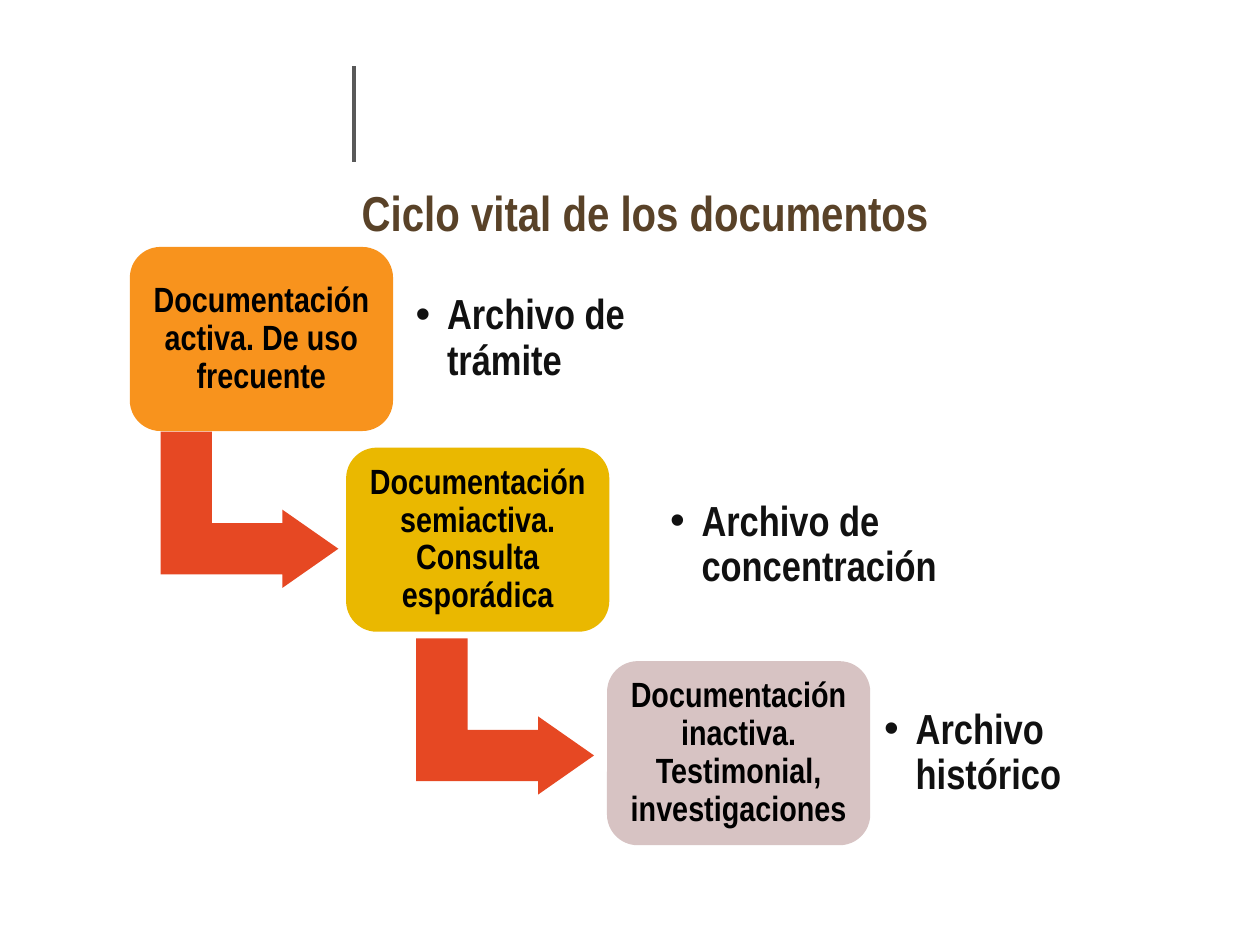
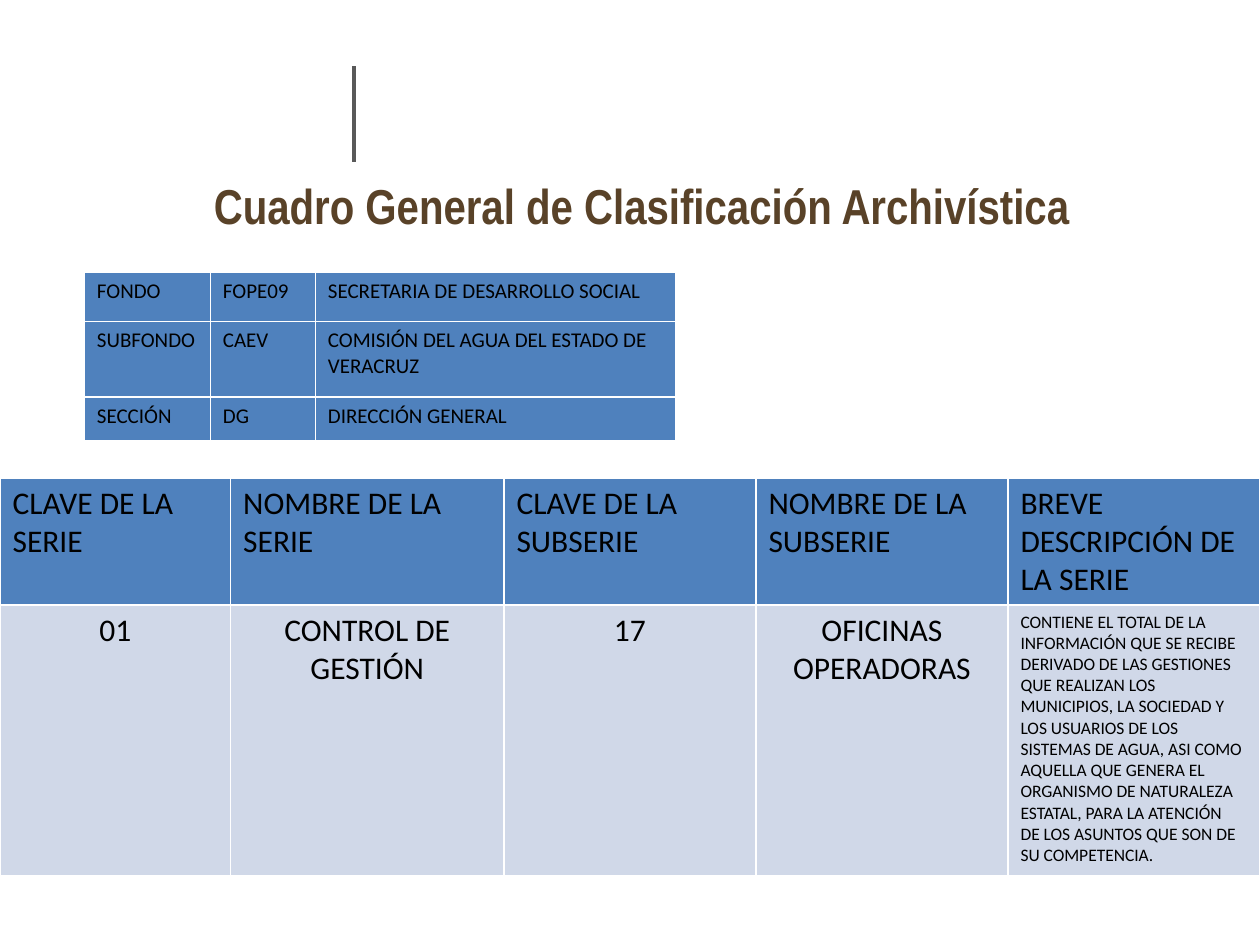
from lxml import etree
from pptx import Presentation
from pptx.dml.color import RGBColor
from pptx.enum.shapes import MSO_CONNECTOR, MSO_SHAPE
from pptx.enum.text import MSO_ANCHOR, PP_ALIGN
from pptx.oxml.ns import qn
from pptx.util import Pt

BROWN = RGBColor(0x59, 0x42, 0x28)
GRAY = RGBColor(0x59, 0x59, 0x59)
BLACK = RGBColor(0x00, 0x00, 0x00)
CHARCOAL = RGBColor(0x11, 0x11, 0x11)
RED = RGBColor(0xE6, 0x48, 0x23)
ORANGE = RGBColor(0xF8, 0x93, 0x1D)
YELLOW = RGBColor(0xEA, 0xB8, 0x00)
MAUVE = RGBColor(0xD7, 0xC3, 0xC3)
BLUE = RGBColor(0x4F, 0x81, 0xBD)
PALE_BLUE = RGBColor(0xD0, 0xD8, 0xE8)

LEFT, CENTER = PP_ALIGN.LEFT, PP_ALIGN.CENTER
TOP, MIDDLE = MSO_ANCHOR.TOP, MSO_ANCHOR.MIDDLE
STRAIGHT = MSO_CONNECTOR.STRAIGHT
ROUNDED, BENT_ARROW = MSO_SHAPE.ROUNDED_RECTANGLE, MSO_SHAPE.BENT_UP_ARROW

HEADING_FONT, TABLE_FONT = "Arial Narrow", "Calibri"
CARD_WIDTH, CARD_HEIGHT = 150.4, 105.2
BULLET_INDENT = 18


class Composer:
    def __init__(self):
        self.deck = Presentation()
        self.deck.slide_width, self.deck.slide_height = Pt(720), Pt(540)
        self.page = None

    def new_page(self):
        self.page = self.deck.slides.add_slide(self.deck.slide_layouts[6])
        rule = self.page.shapes.add_connector(STRAIGHT, Pt(202.3), Pt(38), Pt(202.3), Pt(92.8))
        rule.line.color.rgb = GRAY
        rule.line.width = Pt(2)
        etree.SubElement(rule._element.spPr, qn("a:effectLst"))

    def add_span(self, para, text, size, color, font=HEADING_FONT, bold=True, align=LEFT):
        para.alignment = align
        span = para.add_run()
        span.text = text
        span.font.name = font
        span.font.size = Pt(size)
        span.font.bold = bold
        span.font.color.rgb = color

    def prepare(self, box, inset, anchor):
        frame = box.text_frame
        frame.word_wrap = True
        frame.vertical_anchor = anchor
        frame.margin_left = frame.margin_right = Pt(inset)
        frame.margin_top = frame.margin_bottom = Pt(inset)
        return frame.paragraphs[0]

    def text_box(self, left, top, width, height, inset, anchor):
        box = self.page.shapes.add_textbox(Pt(left), Pt(top), Pt(width), Pt(height))
        return self.prepare(box, inset, anchor)

    def shape(self, kind, left, top, width, height, color):
        shape = self.page.shapes.add_shape(kind, Pt(left), Pt(top), Pt(width), Pt(height))
        shape.shadow.inherit = False
        shape.fill.solid()
        shape.fill.fore_color.rgb = color
        shape.line.fill.background()
        return shape

    def title(self, text, left, top, width, height):
        para = self.text_box(left, top, width, height, 3.6, TOP)
        self.add_span(para, text, 28, BROWN, align=CENTER)

    def card(self, text, left, top, color):
        card = self.shape(ROUNDED, left, top, CARD_WIDTH, CARD_HEIGHT, color)
        card.adjustments[0] = 0.167
        para = self.prepare(card, 6, MIDDLE)
        para.line_spacing = 0.9
        self.add_span(para, text, 20, BLACK, align=CENTER)

    def label(self, text, left, top, width):
        para = self.text_box(left, top, width, 85, 7.2, MIDDLE)
        properties = para._p.get_or_add_pPr()
        properties.set("marL", str(Pt(BULLET_INDENT)))
        properties.set("indent", str(-Pt(BULLET_INDENT)))
        para.line_spacing = 0.9
        etree.SubElement(properties, qn("a:buFont"), typeface="Arial")
        etree.SubElement(properties, qn("a:buChar"), char="•")
        self.add_span(para, text, 24, CHARCOAL)

    def arrow(self, left, top):
        arrow = self.shape(BENT_ARROW, left, top, 89.3, 101.6, RED)
        arrow.rotation = 90
        for index, value in enumerate((0.328, 0.25, 0.358)):
            arrow.adjustments[index] = value

    def cell(self, cell, lines, size, color, align):
        cell.fill.solid()
        cell.fill.fore_color.rgb = color
        frame = cell.text_frame
        for index, line in enumerate(lines):
            para = frame.add_paragraph() if index else frame.paragraphs[0]
            self.add_span(para, line, size, BLACK, TABLE_FONT, False, align)
        properties = cell._tc.get_or_add_tcPr()
        for index, side in enumerate(("a:lnL", "a:lnR", "a:lnT", "a:lnB")):
            border = etree.Element(qn(side), w=str(Pt(1)))
            fill = etree.SubElement(border, qn("a:solidFill"))
            etree.SubElement(fill, qn("a:srgbClr"), val="FFFFFF")
            properties.insert(index, border)

    def table(self, left, top, widths, heights, rows, style):
        frame = self.page.shapes.add_table(
            len(rows), len(widths), Pt(left), Pt(top), Pt(sum(widths)), Pt(sum(heights)))
        table = frame.table
        for column, width in zip(table.columns, widths):
            column.width = Pt(width)
        for row, height in zip(table.rows, heights):
            row.height = Pt(height)
        for row_index, row in enumerate(rows):
            for column_index, content in enumerate(row):
                lines = [content] if isinstance(content, str) else content
                self.cell(table.cell(row_index, column_index), lines,
                          *style(row_index, column_index))


STAGES = [
    ("Documentación activa. De uso frecuente", 74.2, 141.1, ORANGE,
     "Archivo de trámite", 230.4, 151.2, 196.6),
    ("Documentación semiactiva. Consulta esporádica", 197.8, 255.8, YELLOW,
     "Archivo de concentración", 375.8, 269.3, 251.3),
    ("Documentación inactiva. Testimonial, investigaciones", 346.9, 377.8, MAUVE,
     "Archivo histórico", 498.2, 388.1, 145.4),
]
ARROWS = [(97.9, 240.5), (244, 358.6)]

FUND_ROWS = [
    ("FONDO", "FOPE09", "SECRETARIA DE DESARROLLO SOCIAL"),
    ("SUBFONDO", "CAEV", "COMISIÓN DEL AGUA DEL ESTADO DE VERACRUZ"),
    ("SECCIÓN", "DG", "DIRECCIÓN GENERAL"),
]
DESCRIPTION = [
    "CONTIENE EL TOTAL DE LA",
    "INFORMACIÓN QUE SE RECIBE",
    "DERIVADO DE LAS GESTIONES",
    "QUE REALIZAN LOS",
    "MUNICIPIOS, LA SOCIEDAD Y",
    "LOS USUARIOS DE LOS",
    "SISTEMAS DE AGUA, ASI COMO",
    "AQUELLA QUE GENERA EL",
    "ORGANISMO DE NATURALEZA",
    "ESTATAL, PARA LA ATENCIÓN",
    "DE LOS ASUNTOS QUE SON DE SU COMPETENCIA.",
]
SERIES_ROWS = [
    ("CLAVE DE LA SERIE", "NOMBRE DE LA SERIE", "CLAVE DE LA SUBSERIE",
     "NOMBRE DE LA SUBSERIE", "BREVE DESCRIPCIÓN DE LA SERIE"),
    ("01", "CONTROL DE GESTIÓN", "17", "OFICINAS OPERADORAS", DESCRIPTION),
]


def fund_style(row, column):
    return 12, BLUE, LEFT


def series_style(row, column):
    if row == 0:
        return 18, BLUE, LEFT
    return (10, PALE_BLUE, LEFT) if column == 4 else (18, PALE_BLUE, CENTER)


def life_cycle(composer):
    composer.new_page()
    composer.title("Ciclo vital de los documentos", 31, 100.6, 675, 52)
    for left, top in ARROWS:
        composer.arrow(left, top)
    for stage, left, top, color, archive, label_left, label_top, label_width in STAGES:
        composer.card(stage, left, top, color)
        composer.label(archive, label_left, label_top, label_width)


def classification(composer):
    composer.new_page()
    composer.title("Cuadro General de Clasificación Archivística", 43, 97, 647, 60)
    composer.table(48.2, 155.7, [72, 60, 206], [28, 43.2, 25.2], FUND_ROWS, fund_style)
    composer.table(0, 273, [131.8, 156.2, 144, 144, 144], [72.8, 154.8],
                   SERIES_ROWS, series_style)


def main():
    composer = Composer()
    life_cycle(composer)
    classification(composer)
    composer.deck.save("out.pptx")


if __name__ == "__main__":
    main()
